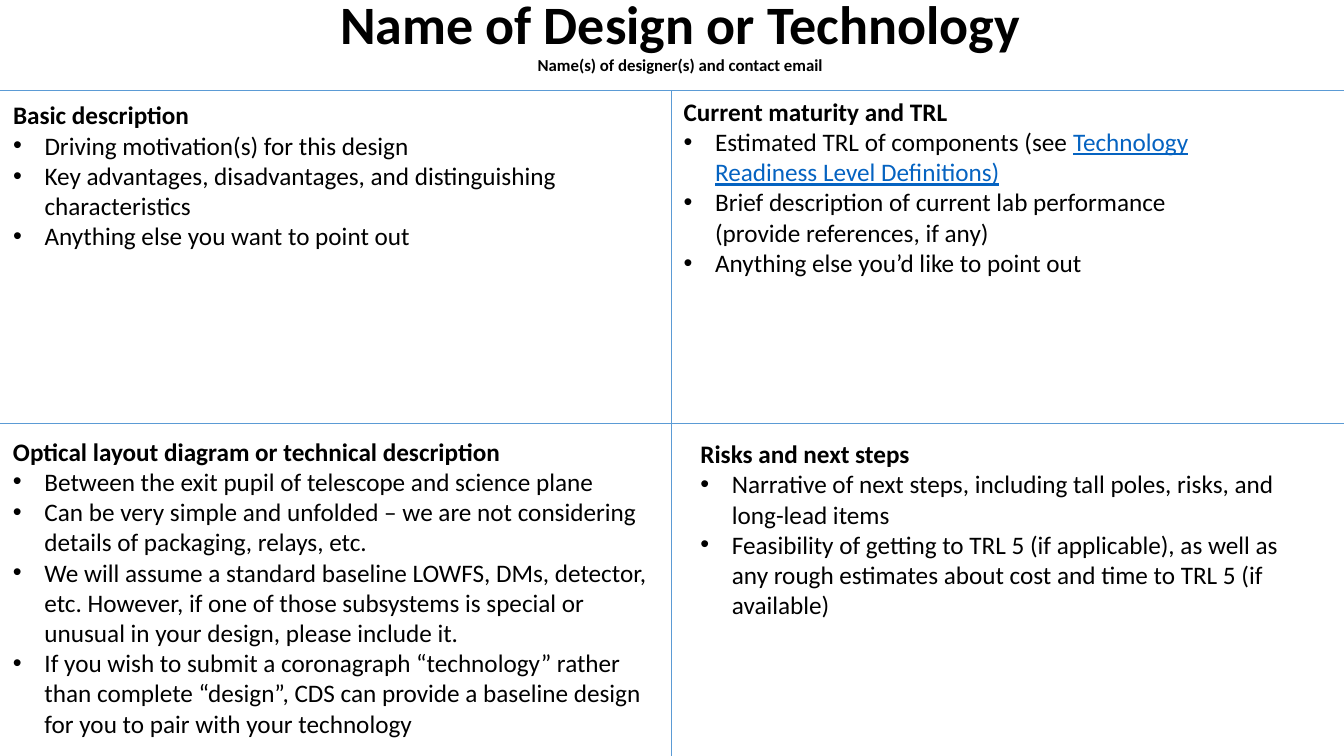
from lxml.etree import SubElement
from pptx import Presentation
from pptx.dml.color import RGBColor
from pptx.enum.shapes import MSO_CONNECTOR as Connector
from pptx.enum.text import MSO_ANCHOR as Anchor, MSO_AUTO_SIZE as AutoSize, PP_ALIGN as Align
from pptx.oxml.ns import qn
from pptx.util import Pt

COLORS = {"text": "000000", "link": "0563C1", "rule": "5B9BD5"}
FONT = "Calibri"
WIDTH, HEIGHT = 960, 540
HEADER_Y, MIDDLE_X, MIDDLE_Y = 64.8, 480, 302.4
BULLET_INDENT = 22.5

TITLE = [("Name of Design or Technology", 38.6),
         ("Name(s) of designer(s) and contact email", 12)]
TITLE_BOX = (72, 0, 828, 52)

QUADRANTS = [
    ((2.2, 67.7, 471.6, 138.2), "Basic description", [
        ["Driving motivation(s) for this design"],
        ["Key advantages, disadvantages, and distinguishing characteristics"],
        ["Anything else you want to point out"],
    ]),
    ((2.2, 307.8, 472.3, 225.4), "Optical layout diagram or technical description", [
        ["Between the exit pupil of telescope and science plane"],
        ["Can be very simple and unfolded – we are not considering details of "
         "packaging, relays, etc."],
        ["We will assume a standard baseline LOWFS, DMs, detector, etc. However, if one "
         "of those subsystems is special or unusual in your design, please include it."],
        ["If you wish to submit a coronagraph “technology” rather than complete “design”, "
         "CDS can provide a baseline design for you to pair with your technology"],
    ]),
    ((481.2, 65, 419, 138.2), "Current maturity and TRL", [
        ["Estimated TRL of components (see ", "Technology Readiness Level Definitions)"],
        ["Brief description of current lab performance (provide references, if any)"],
        ["Anything else you’d like to point out"],
    ]),
    ((493.2, 309.6, 447.8, 159.8), "Risks and next steps", [
        ["Narrative of next steps, including tall poles, risks, and long-lead items"],
        ["Feasibility of getting to TRL 5 (if applicable), as well as any rough estimates "
         "about cost and time to TRL 5 (if available)"],
    ]),
]

DIVIDERS = [(0, MIDDLE_Y, WIDTH, MIDDLE_Y),
            (MIDDLE_X, HEIGHT, MIDDLE_X, HEADER_Y),
            (0, HEADER_Y, WIDTH, HEADER_Y)]


def style(run, size, bold=False, color="text"):
    run.font.name = FONT
    run.font.size = Pt(size)
    run.font.bold = bold
    run.font.color.rgb = RGBColor.from_string(COLORS[color])


def add_bullet(paragraph):
    properties = paragraph._p.get_or_add_pPr()
    properties.set("marL", str(Pt(BULLET_INDENT)))
    properties.set("indent", str(-Pt(BULLET_INDENT)))
    bullet_color = SubElement(properties, qn("a:buClr"))
    SubElement(bullet_color, qn("a:srgbClr"), val=COLORS["text"])
    SubElement(properties, qn("a:buFont"), typeface="Arial")
    SubElement(properties, qn("a:buChar"), char="•")


def add_title(slide):
    title = slide.shapes.title
    title.left, title.top, title.width, title.height = map(Pt, TITLE_BOX)
    frame = title.text_frame
    frame.auto_size = AutoSize.NONE
    frame.word_wrap = True
    frame.vertical_anchor = Anchor.MIDDLE
    heading = frame.paragraphs[0]
    heading.text = "\v".join(line for line, size in TITLE)
    heading.alignment = Align.CENTER
    heading.line_spacing = 0.9
    for run, (line, size) in zip(heading.runs, TITLE):
        style(run, size, bold=True)


def add_divider(slide, ends):
    divider = slide.shapes.add_connector(Connector.STRAIGHT, *map(Pt, ends))
    divider.line.color.rgb = RGBColor.from_string(COLORS["rule"])
    divider.line.width = Pt(0.75)
    SubElement(divider._element.spPr, qn("a:effectLst"))


def add_quadrant(slide, box, heading, points):
    frame = slide.shapes.add_textbox(*map(Pt, box)).text_frame
    frame.word_wrap = True
    frame.auto_size = AutoSize.SHAPE_TO_FIT_TEXT
    frame.text = heading
    style(frame.paragraphs[0].runs[0], 18, bold=True)
    for plain, *linked in points:
        point = frame.add_paragraph()
        point.text = plain
        add_bullet(point)
        style(point.runs[0], 18)
        for words in linked:
            reference = point.add_run()
            reference.text = words
            style(reference, 18, color="link")
            reference.font.underline = True


def main():
    deck = Presentation()
    deck.slide_width, deck.slide_height = Pt(WIDTH), Pt(HEIGHT)
    slide = deck.slides.add_slide(deck.slide_layouts[5])
    add_title(slide)
    for ends in DIVIDERS:
        add_divider(slide, ends)
    for quadrant in QUADRANTS:
        add_quadrant(slide, *quadrant)
    deck.save("out.pptx")


if __name__ == "__main__":
    main()
